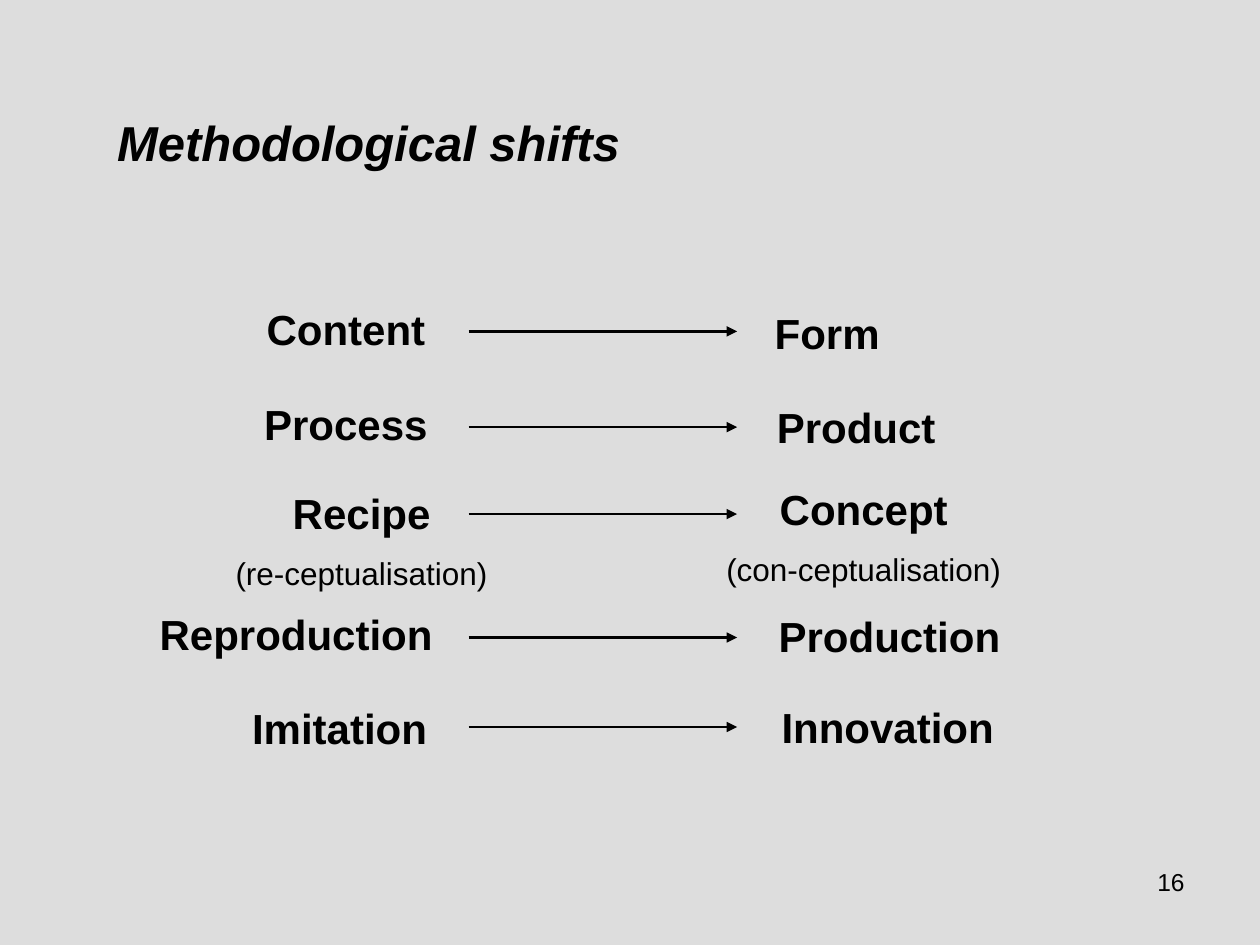
"""Build the slide on methodological shifts."""
from pptx import Presentation
from pptx.dml.color import RGBColor
from pptx.enum.shapes import MSO_CONNECTOR
from pptx.enum.text import MSO_ANCHOR, PP_ALIGN
from pptx.oxml.ns import qn
from pptx.util import Inches, Pt
from lxml.etree import SubElement


def color(value):
    return RGBColor.from_string(value)


def write(paragraph, text, size=24, bold=False, italic=False, align=PP_ALIGN.CENTER, before=0):
    paragraph.alignment = align
    paragraph.space_before = Pt(before)
    span = paragraph.add_run()
    span.text = text
    span.font.name = "Arial"
    span.font.size = Pt(size)
    span.font.bold = bold
    span.font.italic = italic
    span.font.color.rgb = color("000000")


INK = "000000"
ARROW_LEFT, ARROW_RIGHT = 3.72, 5.85

deck = Presentation()
deck.slide_width, deck.slide_height = Inches(10), Inches(7.5)
page = deck.slides.add_slide(deck.slide_layouts[5])
page.background.fill.solid()
page.background.fill.fore_color.rgb = color("DDDDDD")

title = page.shapes.title
title.left, title.top = Inches(0.83), Inches(0.84)
title.width, title.height = Inches(4.57), Inches(0.57)
title.text_frame.vertical_anchor = MSO_ANCHOR.TOP
write(title.text_frame.paragraphs[0], "Methodological shifts", size=28,
      bold=True, italic=True, align=PP_ALIGN.LEFT)

arrow_heights = [2.63, 3.39, 4.08, 5.06, 5.77]
terms = [
    (1.72, 2.36, 2.05, ["Content"]),
    (5.54, 2.39, 2.05, ["Form"]),
    (1.72, 3.11, 2.05, ["Process"]),
    (5.77, 3.14, 2.05, ["Product"]),
    (1.49, 3.82, 2.76, ["Recipe", "(re-ceptualisation)"]),
    (5.27, 3.79, 3.17, ["Concept", "(con-ceptualisation)"]),
    (1.02, 4.78, 2.66, ["Reproduction"]),
    (5.68, 4.80, 2.76, ["Production"]),
    (1.67, 5.53, 2.05, ["Imitation"]),
    (6.02, 5.52, 2.05, ["Innovation"]),
]

for left, top, width, (term, *glosses) in terms:
    height = 0.95 if glosses else 0.5
    box = page.shapes.add_textbox(Inches(left), Inches(top), Inches(width), Inches(height))
    box.text_frame.word_wrap = True
    write(box.text_frame.paragraphs[0], term, bold=True)
    for gloss in glosses:
        write(box.text_frame.add_paragraph(), gloss, size=18, before=9)

for height in arrow_heights:
    arrow = page.shapes.add_connector(MSO_CONNECTOR.STRAIGHT, Inches(ARROW_LEFT), Inches(height),
                                      Inches(ARROW_RIGHT), Inches(height))
    arrow.line.color.rgb = color(INK)
    arrow.line.width = Pt(1.5)
    SubElement(arrow.line._get_or_add_ln(), qn("a:tailEnd"), type="triangle")
    SubElement(arrow._element.spPr, qn("a:effectLst"))

number = page.shapes.add_textbox(Inches(7.17), Inches(6.83), Inches(2.33), Inches(0.52))
number.text_frame.word_wrap = True
write(number.text_frame.paragraphs[0], "16", size=14, align=PP_ALIGN.RIGHT)

deck.save("out.pptx")
